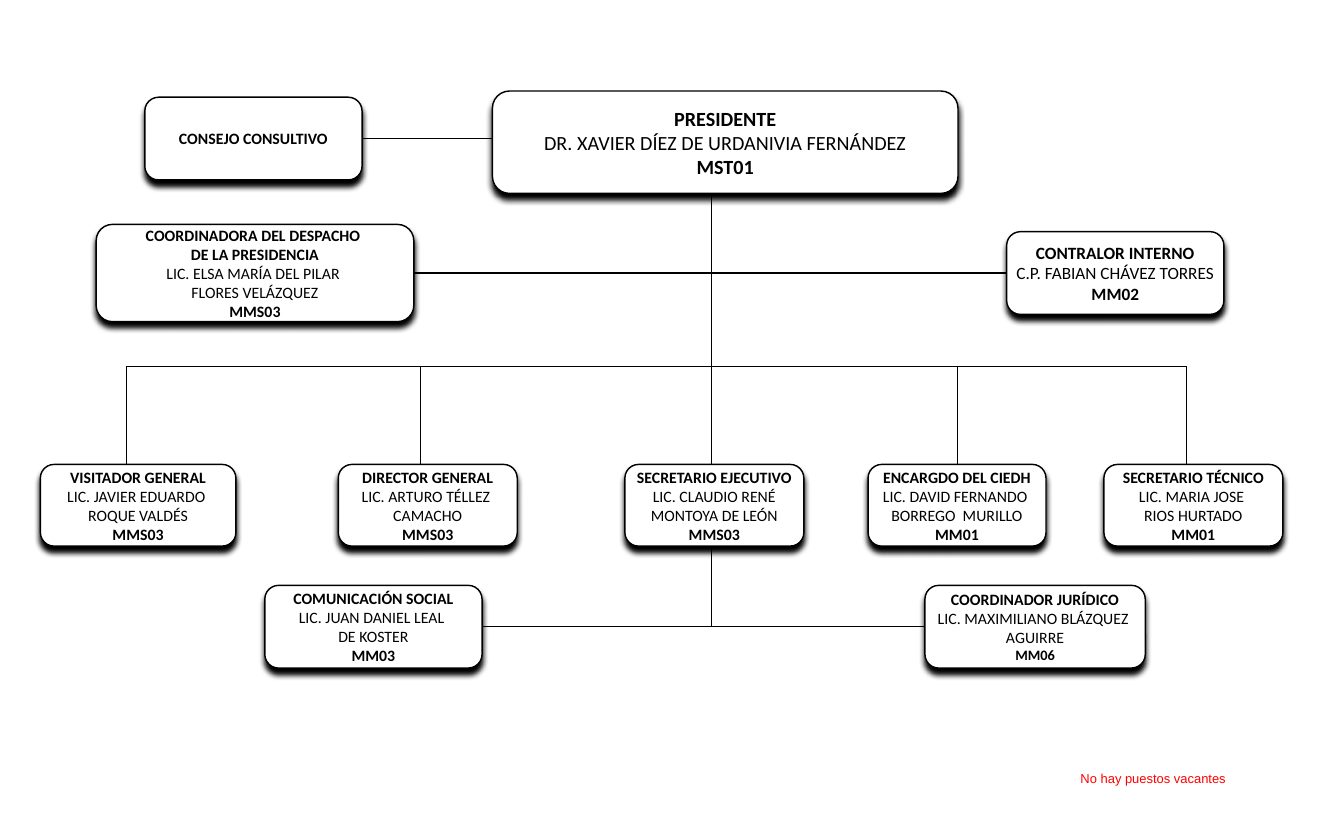
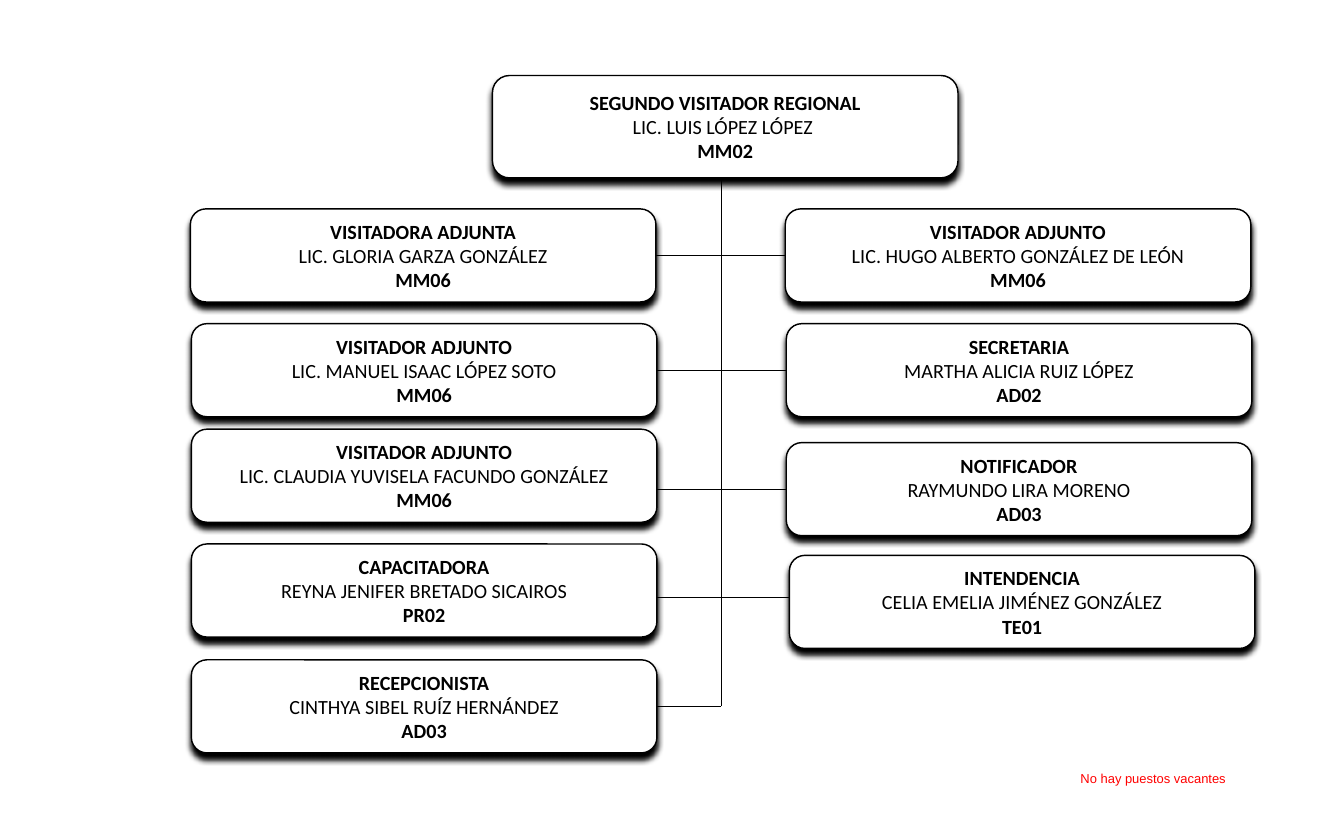
"""Build a two-slide organisation chart of a human rights commission."""
from lxml.etree import SubElement
from pptx import Presentation
from pptx.dml.color import RGBColor
from pptx.enum.shapes import MSO_CONNECTOR as CONNECTOR, MSO_SHAPE as SHAPE
from pptx.enum.text import MSO_ANCHOR as ANCHOR, MSO_AUTO_SIZE as AUTO_SIZE, PP_ALIGN as ALIGN
from pptx.oxml.ns import qn
from pptx.util import Inches, Pt

color = RGBColor.from_string
INK, PAPER, ALERT = "000000", "FFFFFF", "FF0000"
TOP, LEFT, BOTTOM, RIGHT = range(4)


def add_post(slide, left, top, width, height, size, role, person="", code="", code_size=None):
    post = slide.shapes.add_shape(
        SHAPE.ROUNDED_RECTANGLE, Inches(left), Inches(top), Inches(width), Inches(height))
    post.adjustments[0] = 0.167
    post.fill.solid()
    post.fill.fore_color.rgb = color(PAPER)
    post.line.color.rgb = color(INK)
    post.line.width = Pt(1)
    post.shadow.inherit = False
    effects = post._element.spPr.find(qn("a:effectLst"))
    shadow = SubElement(effects, qn("a:outerShdw"), blurRad=str(Pt(4)), dist=str(Pt(4)),
                        dir="5400000", algn="ctr", rotWithShape="0")
    SubElement(shadow, qn("a:srgbClr"), val=INK)
    frame = post.text_frame
    frame.word_wrap = False
    frame.vertical_anchor = ANCHOR.MIDDLE
    frame.margin_left = frame.margin_right = Inches(0.17)
    frame.margin_top = frame.margin_bottom = Inches(0.09)
    rows = [(text, bold, points)
            for block, bold, points in ((role, True, size), (person, False, size),
                                        (code, True, code_size or size))
            if block for text in block.split("|")]
    for index, (text, bold, points) in enumerate(rows):
        paragraph = frame.add_paragraph() if index else frame.paragraphs[0]
        paragraph.alignment = ALIGN.CENTER
        run = paragraph.add_run()
        run.text = text
        run.font.name = "Calibri"
        run.font.size = Pt(points)
        run.font.bold = bold
        run.font.color.rgb = color(INK)
    return post


def add_link(slide, x1, y1, x2, y2, start=None, finish=None):
    link = slide.shapes.add_connector(
        CONNECTOR.STRAIGHT, Inches(x1), Inches(y1), Inches(x2), Inches(y2))
    link.line.color.rgb = color(INK)
    link.line.width = Pt(0.75)
    SubElement(link._element.spPr, qn("a:effectLst"))
    if start:
        link.begin_connect(*start)
    if finish:
        link.end_connect(*finish)


prs = Presentation()
prs.slide_width, prs.slide_height = Inches(12.99), Inches(7.88)
general, regional = [prs.slides.add_slide(prs.slide_layouts[6]) for _ in range(2)]

add_post(general, 4.76, 0.88, 4.5, 0.99, 14, "PRESIDENTE",
         "DR. XAVIER DÍEZ DE URDANIVIA FERNÁNDEZ", "MST01")
council = add_post(general, 1.4, 0.94, 2.1, 0.8, 11, "CONSEJO CONSULTIVO")
office = add_post(general, 0.93, 2.17, 3.07, 0.94, 11,
                  "COORDINADORA DEL DESPACHO |DE LA PRESIDENCIA",
                  "LIC. ELSA MARÍA DEL PILAR |FLORES VELÁZQUEZ", "MMS03")
comptroller = add_post(general, 9.73, 2.24, 2.1, 0.8, 12, "CONTRALOR INTERNO",
                       "C.P. FABIAN CHÁVEZ TORRES", "MM02")
press = add_post(general, 2.56, 5.66, 2.1, 0.8, 11, "COMUNICACIÓN SOCIAL",
                 "LIC. JUAN DANIEL LEAL |DE KOSTER", "MM03")
legal = add_post(general, 8.94, 5.66, 2.13, 0.8, 11, "COORDINADOR JURÍDICO",
                 "LIC. MAXIMILIANO BLÁZQUEZ |AGUIRRE", "MM06", 10)

trunk_x, branch_y, areas_y, area_height = 6.88, 3.54, 4.49, 0.79
areas = [
    (0.39, 1.89, 1.22, "VISITADOR GENERAL", "LIC. JAVIER EDUARDO |ROQUE VALDÉS", "MMS03"),
    (3.27, 1.73, 4.06, "DIRECTOR GENERAL", "LIC. ARTURO TÉLLEZ |CAMACHO", "MMS03"),
    (6.04, 1.73, trunk_x, "SECRETARIO EJECUTIVO", "LIC. CLAUDIO RENÉ|MONTOYA DE LEÓN", "MMS03"),
    (8.39, 1.72, 9.25, "ENCARGDO DEL CIEDH", "LIC. DAVID FERNANDO |BORREGO  MURILLO", "MM01"),
    (10.67, 1.73, 11.47, "SECRETARIO TÉCNICO", "LIC. MARIA JOSE |RIOS HURTADO", "MM01"),
]
for left, width, drop_x, role, person, code in areas:
    area = add_post(general, left, areas_y, width, area_height, 11, role, person, code)
    centred = abs(left + width / 2 - drop_x) < 0.01
    add_link(general, drop_x, branch_y, drop_x, areas_y, finish=(area, TOP) if centred else None)

add_link(general, 3.5, 1.34, 4.76, 1.34, start=(council, RIGHT))
add_link(general, 4, 2.64, 9.73, 2.64, (office, RIGHT), (comptroller, LEFT))
add_link(general, trunk_x, 1.87, trunk_x, branch_y)
add_link(general, areas[0][2], branch_y, areas[-1][2], branch_y)
add_link(general, trunk_x, areas_y + area_height, trunk_x, 6.06)
add_link(general, 4.66, 6.06, 8.94, 6.06, (press, RIGHT), (legal, LEFT))

add_post(regional, 4.76, 0.73, 4.5, 0.99, 14, "SEGUNDO VISITADOR REGIONAL",
         "LIC. LUIS LÓPEZ LÓPEZ ", "MM02")
staff = [
    (1.84, 2.02, "VISITADORA ADJUNTA", "LIC. GLORIA GARZA GONZÁLEZ", "MM06"),
    (7.59, 2.02, "VISITADOR ADJUNTO", "LIC. HUGO ALBERTO GONZÁLEZ DE LEÓN", "MM06"),
    (1.85, 3.13, "VISITADOR ADJUNTO", "LIC. MANUEL ISAAC LÓPEZ SOTO", "MM06"),
    (7.6, 3.13, "SECRETARIA", "MARTHA ALICIA RUIZ LÓPEZ", "AD02"),
    (1.85, 4.15, "VISITADOR ADJUNTO", "LIC. CLAUDIA YUVISELA FACUNDO GONZÁLEZ", "MM06"),
    (7.6, 4.28, "NOTIFICADOR", "RAYMUNDO LIRA MORENO", "AD03"),
    (1.85, 5.26, "CAPACITADORA", "REYNA JENIFER BRETADO SICAIROS", "PR02"),
    (7.63, 5.37, "INTENDENCIA", "CELIA EMELIA JIMÉNEZ GONZÁLEZ", "TE01"),
    (1.85, 6.38, "RECEPCIONISTA", "CINTHYA SIBEL RUÍZ HERNÁNDEZ", "AD03"),
]
posts = [add_post(regional, left, top, 4.5, 0.9, 14, role, person, code)
         for left, top, role, person, code in staff]

spine_x, spine_end = 6.97, 6.83
add_link(regional, spine_x, 1.72, spine_x, spine_end)
for row in (0, 2):
    y = staff[row][1] + 0.45
    add_link(regional, 6.35, y, 7.6, y, (posts[row], RIGHT), (posts[row + 1], LEFT))
add_link(regional, 6.35, 4.73, 7.6, 4.73, finish=(posts[5], LEFT))
add_link(regional, 6.35, 5.78, 7.63, 5.78)
add_link(regional, spine_x, spine_end, 6.35, spine_end, finish=(posts[-1], RIGHT))

for slide in (general, regional):
    vacancies = slide.shapes.add_textbox(Inches(9.49), Inches(7.4), Inches(3.31), Inches(0.25))
    vacancies.text_frame.word_wrap = True
    vacancies.text_frame.auto_size = AUTO_SIZE.SHAPE_TO_FIT_TEXT
    paragraph = vacancies.text_frame.paragraphs[0]
    paragraph.alignment = ALIGN.CENTER
    run = paragraph.add_run()
    run.text = "No hay puestos vacantes"
    run.font.name = "Arial"
    run.font.size = Pt(9)
    run.font.color.rgb = color(ALERT)

prs.save("out.pptx")
